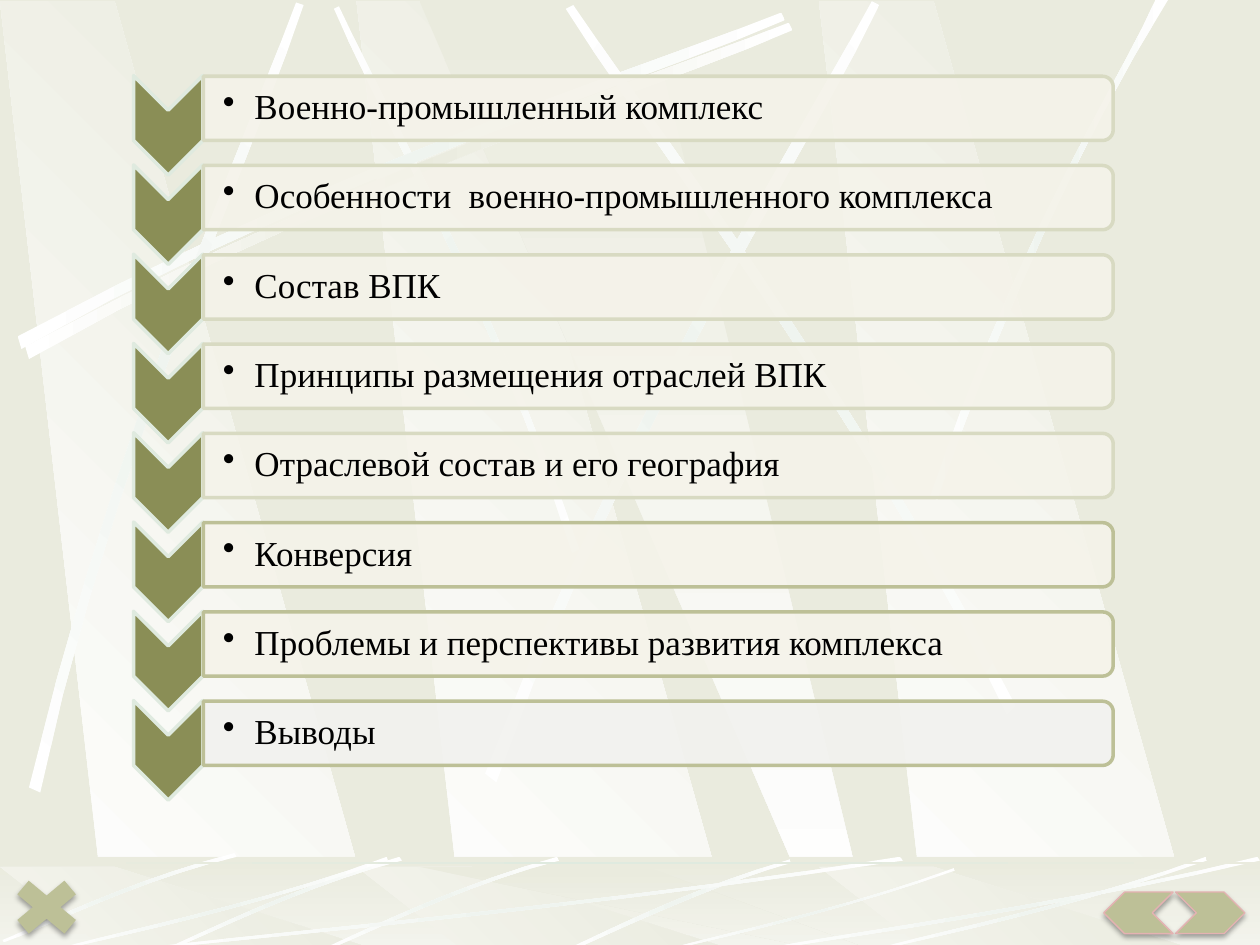
"""Builds a contents slide: eight chevron rows over a backdrop of light beams."""
import pptx
import pptx.util
import pptx.oxml
import pptx.oxml.ns
import pptx.dml.color
import pptx.enum.shapes
import pptx.enum.text

Inches = pptx.util.Inches
Pt = pptx.util.Pt
Kind = pptx.enum.shapes.MSO_SHAPE
qn = pptx.oxml.ns.qn
space = pptx.oxml.ns.nsdecls("a")

hues = {
    "sand": "EAEBDE", "white": "FFFFFF", "mist": "EFF4EF", "mint": "DFEADF",
    "olive": "8A8E56", "moss": "BDC097", "pale": "D8DAC2", "cream": "F5F3EA",
    "gray": "F2F2EF", "pink": "E4B2B2", "black": "000000",
}

deck = pptx.Presentation()
deck.slide_width, deck.slide_height = Inches(10), Inches(7.5)
slide = deck.slides.add_slide(deck.slide_layouts[6])
slide.background.fill.solid()
slide.background.fill.fore_color.rgb = pptx.dml.color.RGBColor.from_string(hues["sand"])
shapes = slide.shapes


def paint(shape, tones, turn=0, alpha=100, edge=None, width=2):
    """Fills with one tone or an even gradient, and sets the outline."""
    shape.shadow.inherit = False
    shape.fill.solid()
    shape.fill.fore_color.rgb = pptx.dml.color.RGBColor.from_string(hues[tones[0]])
    solid = shape.element.spPr.find(qn("a:solidFill"))
    if alpha < 100:
        solid[0].append(pptx.oxml.parse_xml(f'<a:alpha {space} val="{alpha * 1000}"/>'))
    if len(tones) > 1:
        step = 100000 // (len(tones) - 1)
        stops = "".join(
            f'<a:gs pos="{i * step}"><a:srgbClr val="{hues[tone]}"/></a:gs>'
            for i, tone in enumerate(tones))
        solid.getparent().replace(solid, pptx.oxml.parse_xml(
            f'<a:gradFill {space} rotWithShape="1"><a:gsLst>{stops}</a:gsLst>'
            f'<a:lin ang="{round(turn * 60000)}" scaled="0"/></a:gradFill>'))
    if edge:
        shape.line.color.rgb = pptx.dml.color.RGBColor.from_string(hues[edge])
        shape.line.width = Pt(width)
    else:
        shape.line.fill.background()


def trace(dots, tones, turn):
    """Draws a closed outline through the dots."""
    dots = [(Inches(x), Inches(y)) for x, y in dots]
    pen = shapes.build_freeform(*dots[0], scale=1.0)
    pen.add_line_segments(dots[1:], close=True)
    paint(pen.convert_to_shape(), tones, turn)


glow, plain = ("white", "mist", "white"), ("white", "sand", "white")
sky = [
    ((0.2, 2.75), (2.84, 1.34), (5.24, 0.59), (6.26, 0.18),
     (6.29, 0.24), (5.28, 0.69), (2.54, 1.51), (0.23, 2.85), plain, 0, [0]),
    ((4.6, 4.36), (3.91, 2.34), (3.02, 0.77), (2.69, 0.05),
     (2.65, 0.07), (2.95, 0.79), (3.98, 2.58), (4.54, 4.39), glow, 45, [0]),
    ((0.14, 2.67), (2.78, 1.25), (5.18, 0.51), (6.2, 0.1),
     (6.23, 0.16), (5.22, 0.61), (2.48, 1.43), (0.17, 2.77), glow, 0, [0]),
    ((0.23, 6.25), (0.93, 3.34), (1.97, 1.05), (2.35, 0.02),
     (2.41, 0.04), (2.07, 1.09), (0.86, 3.68), (0.32, 6.29), glow, 311.7, [0]),
    ((3.85, 6.14), (4.98, 3.2), (6.38, 1.02), (6.92, 0.01),
     (6.98, 0.04), (6.49, 1.08), (4.86, 3.55), (3.94, 6.21), glow, 321.6, [0]),
    ((8.06, 5.6), (6.7, 2.93), (5.16, 0.95), (4.55, 0.04),
     (4.49, 0.07), (5.07, 1.01), (6.85, 3.25), (7.99, 5.67), glow, 34.7, [0]),
    ((7.38, 3.94), (8.14, 1.73), (8.88, 0.66), (9.17, 0),
     (9.27, 0), (8.36, 1.45), (7.69, 3.22), (7.44, 3.97), glow, 0, [0]),
]
floor = [
    ((6.27, 6.82), (5.37, 7.09), (4.77, 7.42), (4.48, 7.54),
     (4.53, 7.55), (4.9, 7.38), (5.71, 7), (6.28, 6.85), glow, 0, [0]),
    ((4.42, 6.8), (3.55, 7.05), (2.87, 7.4), (2.56, 7.53),
     (2.57, 7.55), (2.88, 7.43), (3.65, 7.03), (4.44, 6.83), glow, 315, [0, -1.25]),
    ((1.86, 6.77), (0.99, 7), (0.33, 7.34), (0.02, 7.46),
     (0.03, 7.48), (0.34, 7.37), (1.1, 6.98), (1.88, 6.8), glow, 315, [0]),
    ((7.17, 6.83), (4.49, 7.23), (2.06, 7.44), (1.03, 7.55),
     (1, 7.54), (2.02, 7.41), (4.8, 7.18), (7.14, 6.8), glow, 0, [0]),
    ((3.08, 6.83), (1.93, 7.23), (0.88, 7.44), (0.43, 7.55),
     (0.42, 7.54), (0.86, 7.41), (2.06, 7.18), (3.07, 6.8), glow, 0, [0, 6.5]),
    ((7.58, 6.91), (6.58, 7.26), (5.67, 7.45), (5.28, 7.55),
     (5.27, 7.54), (5.65, 7.43), (6.69, 7.22), (7.57, 6.89), glow, 0, [0]),
    ((10, 6.83), (8.27, 7.23), (6.69, 7.44), (6.02, 7.55),
     (6, 7.54), (6.66, 7.41), (8.46, 7.18), (9.98, 6.8), glow, 0, [0]),
]

slab = Inches(0), Inches(6.8), Inches(10), Inches(0.75)
for top, base, rays in ((0.01, 7.52, sky), (6.88, 7.55, floor)):
    if rays is floor:
        paint(shapes.add_shape(Kind.RECTANGLE, *slab), ("sand", "white"), 90)
    for left in (2.83, 0, 6.5):
        trace([(left + 0.86, base), (left + 3.02, base), (left + 0.91, top), (left, top)],
              ("white", "sand"), 315)
    trace([(3.33, top), (6.58, base), (6.94, base), (5.13, top)], ("sand", "white"), 90)
    if rays is floor:
        paint(shapes.add_shape(Kind.RECTANGLE, *slab), ("sand",), alpha=50)
    for *knots, tones, turn, shifts in rays:
        curve = []
        for a, b, c, d in (knots[:4], knots[4:]):
            for t in (i / 10 for i in range(11)):
                curve.append([
                    a[k] * (1 - t) ** 3 + 3 * b[k] * t * (1 - t) ** 2
                    + 3 * c[k] * t ** 2 * (1 - t) + d[k] * t ** 3 for k in (0, 1)])
        for shift in shifts:
            trace([(x + shift, y) for x, y in curve], tones, turn)
rim = shapes.add_shape(Kind.RECTANGLE, Inches(0), Inches(6.84), Inches(10), Inches(0.02))
paint(rim, ("sand", "mint", "sand"))

topics = [
    "Военно-промышленный комплекс",
    "Особенности  военно-промышленного комплекса",
    "Состав ВПК",
    "Принципы размещения отраслей ВПК",
    "Отраслевой состав и его география",
    "Конверсия",
    "Проблемы и перспективы развития комплекса",
    "Выводы",
]
pitch = 4.96 / 7
for row, topic in enumerate(topics):
    drop = row * pitch
    mark = shapes.add_shape(
        Kind.CHEVRON, Inches(0.94), Inches(0.72 + drop), Inches(0.79), Inches(0.55))
    mark.rotation = 90
    paint(mark, ("olive",), edge="mint")

    bar = shapes.add_shape(
        Kind.ROUND_2_SAME_RECTANGLE,
        Inches(4.97), Inches(drop - 2.75), Inches(0.51), Inches(7.22))
    bar.rotation = 90
    paint(bar, ("gray" if row == 7 else "cream",), alpha=90,
          edge="pale" if row < 5 else "moss")

    frame = shapes.add_textbox(
        Inches(1.61), Inches(0.63 + drop), Inches(7.19), Inches(0.46)).text_frame
    frame.word_wrap = True
    frame.vertical_anchor = pptx.enum.text.MSO_ANCHOR.MIDDLE
    frame.margin_left = Inches(0.16)
    frame.margin_top = frame.margin_right = frame.margin_bottom = Inches(0.01)
    frame.text = topic
    para = frame.paragraphs[0]
    para.level = 1
    para.line_spacing = 0.9
    props = para._p.get_or_add_pPr()
    props.set("marL", str(Inches(0.25)))
    props.set("indent", str(-Inches(0.25)))
    props.append(pptx.oxml.parse_xml(f'<a:buChar {space} char="•"/>'))
    font = para.runs[0].font
    font.name, font.size = "Times New Roman", Pt(20)
    font.color.rgb = pptx.dml.color.RGBColor.from_string(hues["black"])

for kind, left, top, width, height, turn, edge in (
    (Kind.CHEVRON, 9.33, 7.08, 0.55, 0.33, 0, "pink"),
    (Kind.MATH_MULTIPLY, 0.01, 6.9, 0.72, 0.6, 0, None),
    (Kind.CHEVRON, 8.76, 7.08, 0.55, 0.33, 180, "pink"),
):
    key = shapes.add_shape(kind, Inches(left), Inches(top), Inches(width), Inches(height))
    key.rotation = turn
    paint(key, ("moss",), edge=edge, width=0.75)
    key.element.spPr.find(qn("a:effectLst")).append(pptx.oxml.parse_xml(
        f'<a:outerShdw {space} blurRad="{Pt(3.1)}" dist="{Pt(1.8)}" dir="5400000" '
        f'rotWithShape="0"><a:srgbClr val="{hues["black"]}"><a:alpha val="35000"/>'
        '</a:srgbClr></a:outerShdw>'))

deck.save("out.pptx")
